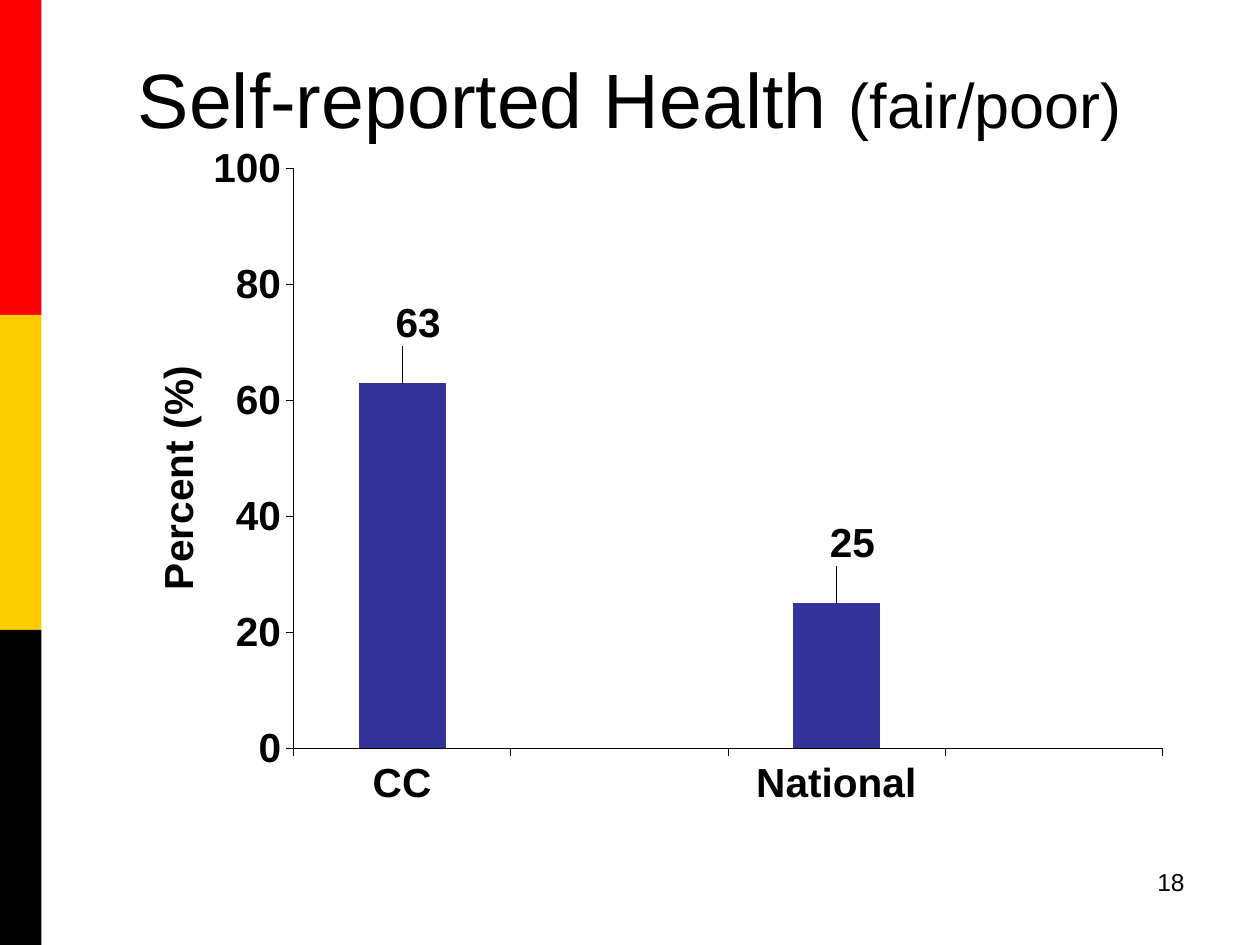
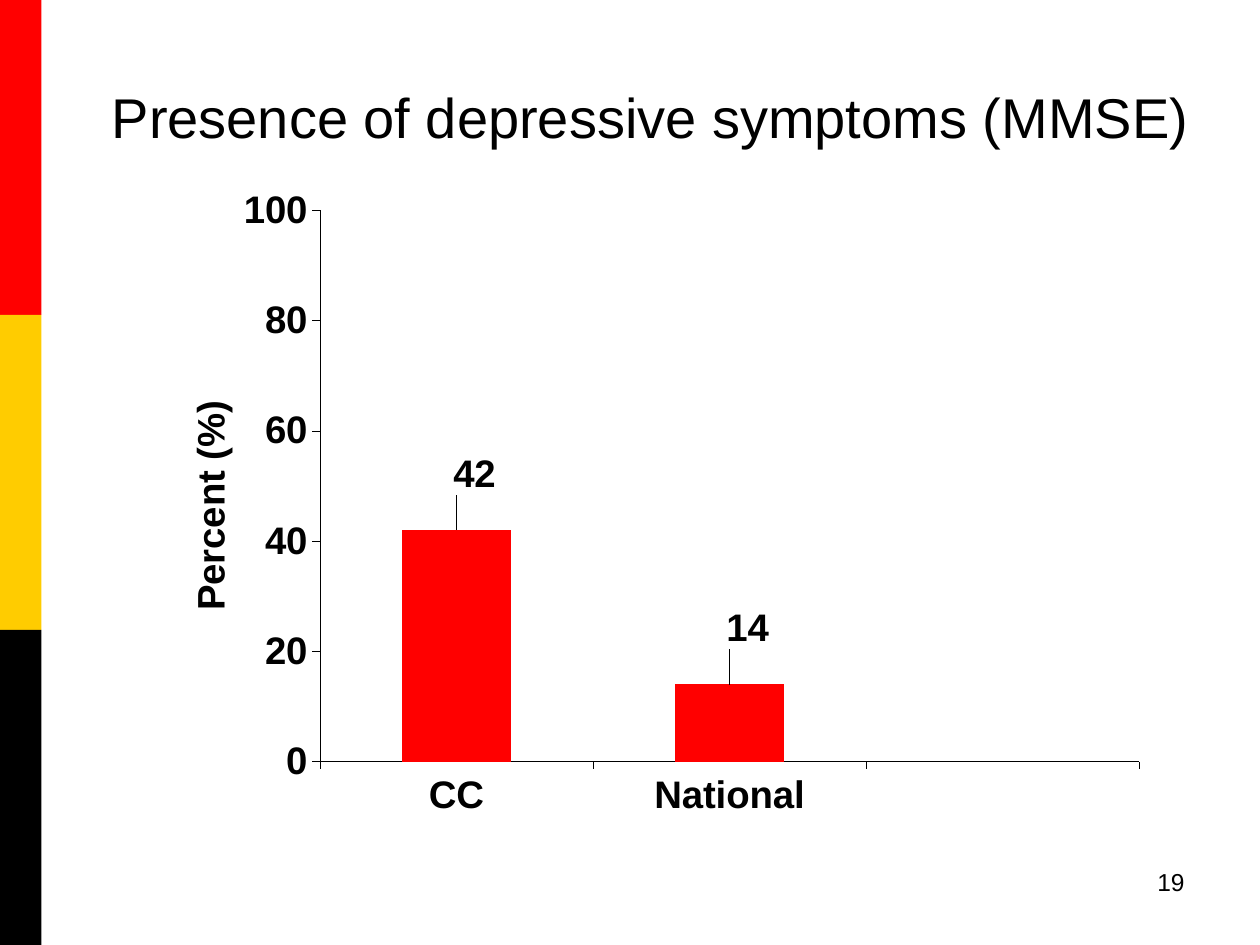
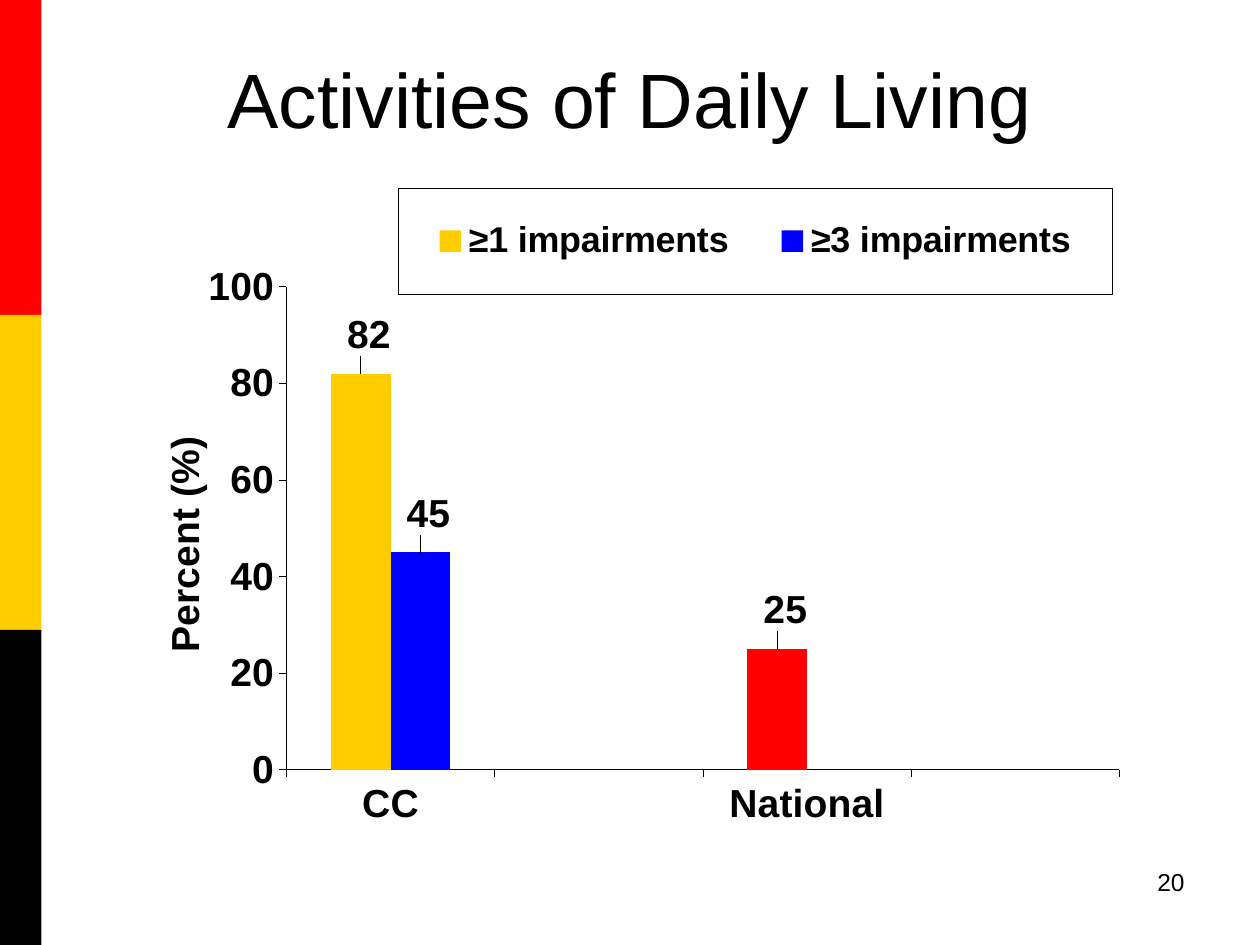
from dataclasses import dataclass, field

from lxml import etree
from pptx import Presentation
from pptx.chart.data import CategoryChartData
from pptx.dml.color import RGBColor
from pptx.enum.chart import (XL_CHART_TYPE, XL_LABEL_POSITION, XL_LEGEND_POSITION,
                             XL_TICK_LABEL_POSITION, XL_TICK_MARK)
from pptx.enum.shapes import MSO_SHAPE
from pptx.enum.text import MSO_ANCHOR, PP_ALIGN
from pptx.oxml import parse_xml
from pptx.oxml.ns import nsdecls, qn
from pptx.util import Emu, Pt

COLUMNS = XL_CHART_TYPE.COLUMN_CLUSTERED
OUTSIDE_END = XL_LABEL_POSITION.OUTSIDE_END
LEGEND_TOP = XL_LEGEND_POSITION.TOP
LABELS_LOW = XL_TICK_LABEL_POSITION.LOW
TICK_OUT, TICK_NONE = XL_TICK_MARK.OUTSIDE, XL_TICK_MARK.NONE
RECTANGLE = MSO_SHAPE.RECTANGLE
MIDDLE, TOP = MSO_ANCHOR.MIDDLE, MSO_ANCHOR.TOP
CENTER, RIGHT = PP_ALIGN.CENTER, PP_ALIGN.RIGHT

EMU_PER_PX = 9144  # 100 px to the inch
FONT = "Arial"
COLORS = {
    "red": "FF0000",
    "gold": "FFCC00",
    "black": "000000",
    "indigo": "333399",
    "blue": "0000FF",
    "white": "FFFFFF",
}
BAND_COLORS = ("red", "gold", "black")
BAND_WIDTH, BAND_HEIGHT = 33, 250
PAGE_NUMBER_BOX = (717, 683, 233, 52)


@dataclass
class Measure:
    name: str
    values: tuple
    color: str
    point_colors: dict[int, str] = field(default_factory=dict)


@dataclass
class HealthSlide:
    number: int
    title_parts: tuple  # (text, size) pairs
    title_box: tuple
    chart_box: tuple
    size: float
    line: float
    grid: float
    categories: tuple
    measures: tuple
    plot_area: tuple  # fractions of the chart
    axis_title_at: tuple
    label_shift: tuple
    legend_area: tuple = ()
    legend_size: float = 0


SLIDES = (
    HealthSlide(18, (("Self-reported Health ", 44), ("(fair/poor)", 36)),
                (50, 30, 900, 95), (89, 111, 847, 561), 23.2, 0.32, 1.29,
                ("CC", "", "National", ""),
                (Measure("Series 1", (63, None, 25, None), "indigo"),),
                (0.17, 0.041, 0.814, 0.82), (0.03, 0.31), (0.015, -0.045)),
    HealthSlide(19, (("Presence of depressive symptoms (MMSE)", 32),),
                (33, 30, 967, 125), (118, 149, 799, 529), 21.9, 0.3, 1.21,
                ("CC", "National", ""),
                (Measure("Series 1", (42, 14, None), "red"),),
                (0.17, 0.034, 0.814, 0.827), (0.03, 0.31), (0.018, -0.045)),
    HealthSlide(20, (("Activities of Daily Living", 44),),
                (50, 30, 900, 95), (88, 146, 815, 540), 22.3, 0.31, 1.25,
                ("CC", "", "National", ""),
                (Measure("≥1 impairments", (82, None, 25, None), "gold", {2: "red"}),
                 Measure("≥3 impairments", (45, None, None, None), "blue")),
                (0.171, 0.151, 0.811, 0.71), (0.04, 0.36), (0.008, -0.018),
                (0.28, 0.006, 0.695, 0.156), 20.5),
)


def px(length: int) -> Emu:
    return Emu(length * EMU_PER_PX)


def rgb(color: str) -> RGBColor:
    return RGBColor.from_string(COLORS[color])


def set_font(font, size: float, bold: bool = False) -> None:
    font.name, font.size, font.bold = FONT, Pt(size), bold
    font.color.rgb = rgb("black")


def paint(fmt, color: str) -> None:
    fmt.fill.solid()
    fmt.fill.fore_color.rgb = rgb(color)


def draw_line(line, color: str, width: float) -> None:
    line.color.rgb = rgb(color)
    line.width = Pt(width)


def manual_layout(area: tuple, edge: bool = True, inner: bool = False):
    """Place a chart part by fractions: from the chart's edge or as a shift."""
    layout = parse_xml(f"<c:layout {nsdecls('c')}><c:manualLayout/></c:layout>")
    settings = [("layoutTarget", "inner")] if inner else []
    if edge:
        settings += [("xMode", "edge"), ("yMode", "edge")]
    settings += zip("xywh", area)
    for tag, value in settings:
        etree.SubElement(layout[0], qn(f"c:{tag}")).set("val", str(value))
    return layout


def put_layout(parent, layout, after: str = "") -> None:
    for old in parent.findall(qn("c:layout")):
        parent.remove(old)
    if after:
        parent.find(qn(after)).addnext(layout)
    else:
        parent.insert(0, layout)


def add_bands(slide) -> None:
    for row, color in enumerate(BAND_COLORS):
        band = slide.shapes.add_shape(RECTANGLE, 0, px(row * BAND_HEIGHT),
                                      px(BAND_WIDTH), px(BAND_HEIGHT))
        band.shadow.inherit = False
        paint(band, color)
        band.line.fill.background()


def add_text(slide, box: tuple, parts: tuple, align, anchor) -> None:
    frame = slide.shapes.add_textbox(*map(px, box)).text_frame
    frame.word_wrap = True
    frame.vertical_anchor = anchor
    paragraph = frame.paragraphs[0]
    paragraph.alignment = align
    for text, size in parts:
        run = paragraph.add_run()
        run.text = text
        set_font(run.font, size)


def style_axes(chart, content: HealthSlide) -> None:
    groups, percent = chart.category_axis, chart.value_axis
    for axis in (groups, percent):
        axis.major_tick_mark, axis.minor_tick_mark = TICK_OUT, TICK_NONE
        set_font(axis.tick_labels.font, content.size, True)
        draw_line(axis.format.line, "black", content.line)
    groups.tick_label_position = LABELS_LOW
    groups.has_major_gridlines = False
    percent.minimum_scale, percent.maximum_scale, percent.major_unit = 0, 100, 20
    percent.has_major_gridlines = True
    draw_line(percent.major_gridlines.format.line, "white", content.grid)
    heading = percent.axis_title.text_frame.paragraphs[0]
    heading.text = "Percent (%)"
    set_font(heading.runs[0].font, content.size, True)
    put_layout(percent.axis_title.element if hasattr(percent.axis_title, "element")
               else chart.element.xpath(".//c:valAx/c:title")[0],
               manual_layout(content.axis_title_at), "c:tx")


def style_measure(series, measure: Measure, size: float) -> None:
    paint(series.format, measure.color)
    series.invert_if_negative = False
    for index, color in measure.point_colors.items():
        paint(series.points[index].format, color)
    series.data_labels.show_value = True
    set_font(series.data_labels.font, size, True)
    for index, value in enumerate(measure.values):
        if value is not None:
            label = series.points[index].data_label
            set_font(label.font, size, True)
            label.position = OUTSIDE_END


def add_legend(chart, content: HealthSlide) -> None:
    chart.has_legend = True
    legend = chart.legend
    legend.position = LEGEND_TOP
    legend.include_in_layout = False
    set_font(legend.font, content.legend_size, True)
    element = chart.element.xpath(".//c:legend")[0]
    put_layout(element, manual_layout(content.legend_area), "c:legendPos")
    # Thin frame around the legend
    element.find(qn("c:overlay")).addnext(parse_xml(
        f'<c:spPr {nsdecls("c", "a")}><a:ln w="{Pt(content.line)}"><a:solidFill>'
        f'<a:srgbClr val="{COLORS["black"]}"/></a:solidFill></a:ln></c:spPr>'))


def add_percent_chart(slide, content: HealthSlide) -> None:
    data = CategoryChartData()
    data.categories = content.categories
    for measure in content.measures:
        data.add_series(measure.name, measure.values)
    chart = slide.shapes.add_chart(COLUMNS, *map(px, content.chart_box), data).chart
    chart.has_title = False
    chart.has_legend = False
    set_font(chart.font, content.size, True)
    plot = chart.plots[0]
    plot.gap_width, plot.overlap = 150, 0
    plot.vary_by_categories = False
    style_axes(chart, content)
    for series, measure in zip(plot.series, content.measures):
        style_measure(series, measure, content.size)
    for label in chart.element.xpath(".//c:dLbl"):
        put_layout(label, manual_layout(content.label_shift, edge=False), "c:idx")
    put_layout(chart.element.xpath(".//c:plotArea")[0],
               manual_layout(content.plot_area, inner=True))
    if content.legend_area:
        add_legend(chart, content)


def main() -> None:
    deck = Presentation()
    deck.slide_width, deck.slide_height = px(1000), px(750)
    blank = deck.slide_layouts[6]
    for content in SLIDES:
        slide = deck.slides.add_slide(blank)
        add_bands(slide)
        add_text(slide, content.title_box, content.title_parts, CENTER, MIDDLE)
        add_percent_chart(slide, content)
        add_text(slide, PAGE_NUMBER_BOX, ((str(content.number), 14),), RIGHT, TOP)
    deck.save("out.pptx")


if __name__ == "__main__":
    main()
